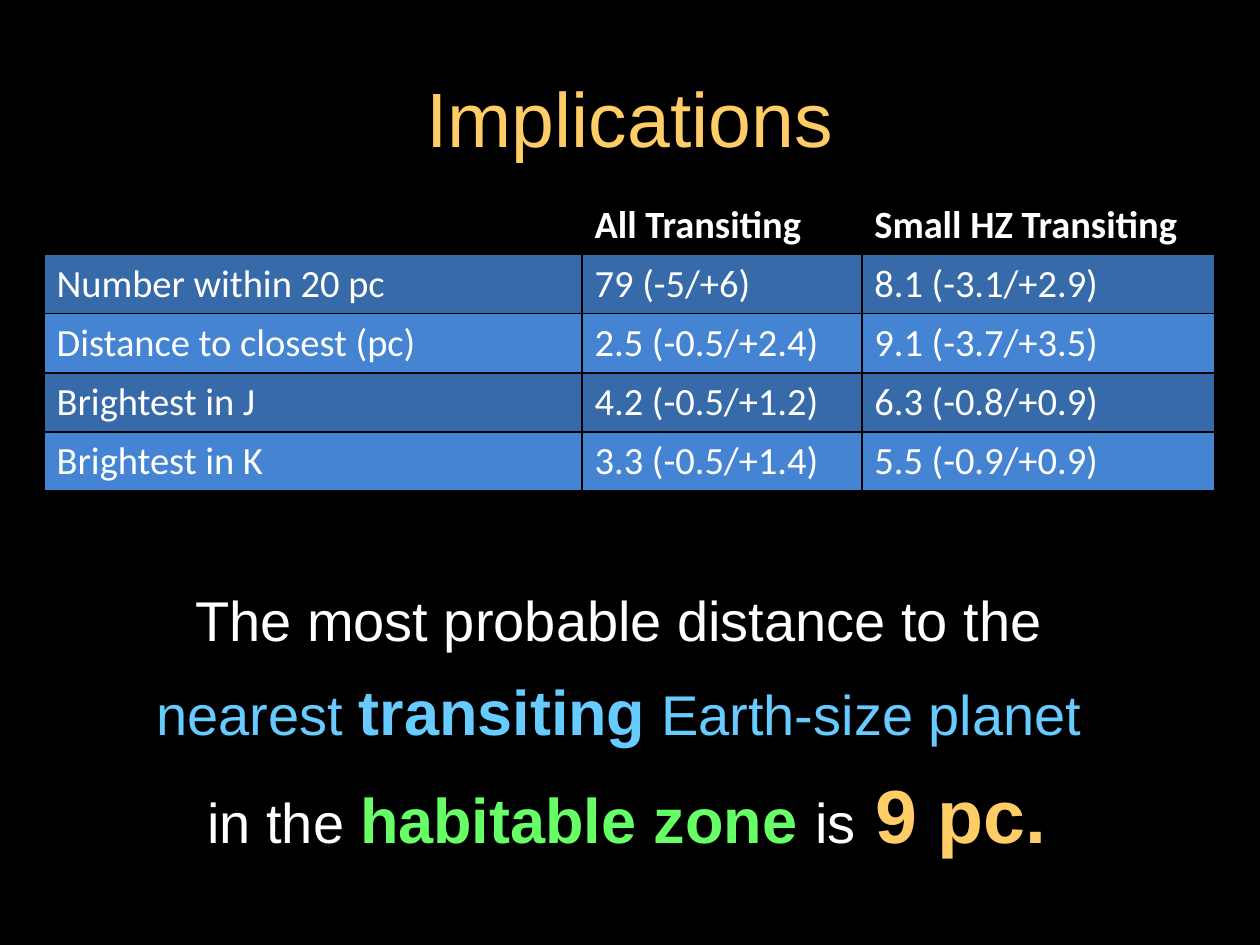
from lxml.etree import SubElement
from pptx import Presentation
from pptx.dml.color import RGBColor
from pptx.enum.text import MSO_ANCHOR, PP_ALIGN
from pptx.oxml.ns import qn
from pptx.util import Inches, Pt

WIDE, HIGH = Inches(10), Inches(7.5)
HUES = {
    "black": "000000", "white": "FFFFFF", "gold": "FFCC66", "sky": "66CCFF",
    "green": "66FF66", "deep": "376AA9", "light": "4584D3",
}
ROWS = [
    ("", "All Transiting", "Small HZ Transiting"),
    ("Number within 20 pc", "79 (-5/+6)", "8.1 (-3.1/+2.9)"),
    ("Distance to closest (pc)", "2.5 (-0.5/+2.4)", "9.1 (-3.7/+3.5)"),
    ("Brightest in J", "4.2 (-0.5/+1.2)", "6.3 (-0.8/+0.9)"),
    ("Brightest in K", "3.3 (-0.5/+1.4)", "5.5 (-0.9/+0.9)"),
]
COLS = (4.27, 2.22, 2.8)
# Each run: text, size, colour, bold
TITLE = [[("Implications", 44, "gold", False)]]
CLAIM = [
    [("The most probable distance to the ", 32, "white", False)],
    [("nearest ", 32, "sky", False), ("transiting", 36, "sky", True),
     (" Earth-size planet ", 32, "sky", False)],
    [("in the ", 32, "white", False), ("habitable zone ", 36, "green", True),
     ("is", 32, "white", False), (" ", 40, "gold", True),
     ("9 pc.", 43, "gold", True)],
]


def hue(name):
    return RGBColor.from_string(HUES[name])


def add_run(para, text, size, color, bold, face="Arial"):
    run = para.add_run()
    run.text = text
    font = run.font
    font.name, font.size, font.bold = face, Pt(size), bold
    font.color.rgb = hue(color)


def add_text(slide, box, lines, anchor, inset=0.05, gap=0):
    """Add centred lines; box holds shares of the slide's size."""
    left, top, width, height = box
    shape = slide.shapes.add_textbox(
        int(left * WIDE), int(top * HIGH), int(width * WIDE), int(height * HIGH))
    frame = shape.text_frame
    frame.word_wrap = True
    frame.vertical_anchor = anchor
    frame.margin_top = Inches(inset)
    for i, runs in enumerate(lines):
        para = frame.paragraphs[0] if i == 0 else frame.add_paragraph()
        para.alignment = PP_ALIGN.CENTER
        para.space_before = Pt(gap if i else 0)
        for run in runs:
            add_run(para, *run)


def add_edges(cell):
    """Draw thin black borders, placed ahead of the cell's fill."""
    props = cell._tc.get_or_add_tcPr()
    for i, side in enumerate(("lnL", "lnR", "lnT", "lnB")):
        line = SubElement(props, qn(f"a:{side}"), w=str(Pt(1)))
        fill = SubElement(line, qn("a:solidFill"))
        SubElement(fill, qn("a:srgbClr"), val=HUES["black"])
        props.insert(i, line)


def add_grid(slide):
    frame = slide.shapes.add_table(
        len(ROWS), len(COLS), Inches(0.35), Inches(1.55),
        Inches(sum(COLS)), Inches(0.47 * len(ROWS)))
    table = frame.table
    for col, width in zip(table.columns, COLS):
        col.width = Inches(width)
    for r, row in enumerate(ROWS):
        shade = "black" if r == 0 else ("light", "deep")[r % 2]
        for c, text in enumerate(row):
            cell = table.cell(r, c)
            cell.fill.solid()
            cell.fill.fore_color.rgb = hue(shade)
            add_edges(cell)
            if text:
                add_run(cell.text_frame.paragraphs[0], text, 22, "white",
                        r == 0, "Calibri")


def main():
    deck = Presentation()
    deck.slide_width, deck.slide_height = WIDE, HIGH
    slide = deck.slides.add_slide(deck.slide_layouts[6])
    slide.background.fill.solid()
    slide.background.fill.fore_color.rgb = hue("black")
    add_text(slide, (0.05, 0.04, 0.9, 1 / 6), TITLE, MSO_ANCHOR.MIDDLE)
    add_text(slide, (0.03, 0.61, 0.935, 0.28), CLAIM, MSO_ANCHOR.TOP, 0.07, 11.5)
    add_grid(slide)
    deck.save("out.pptx")


if __name__ == "__main__":
    main()
